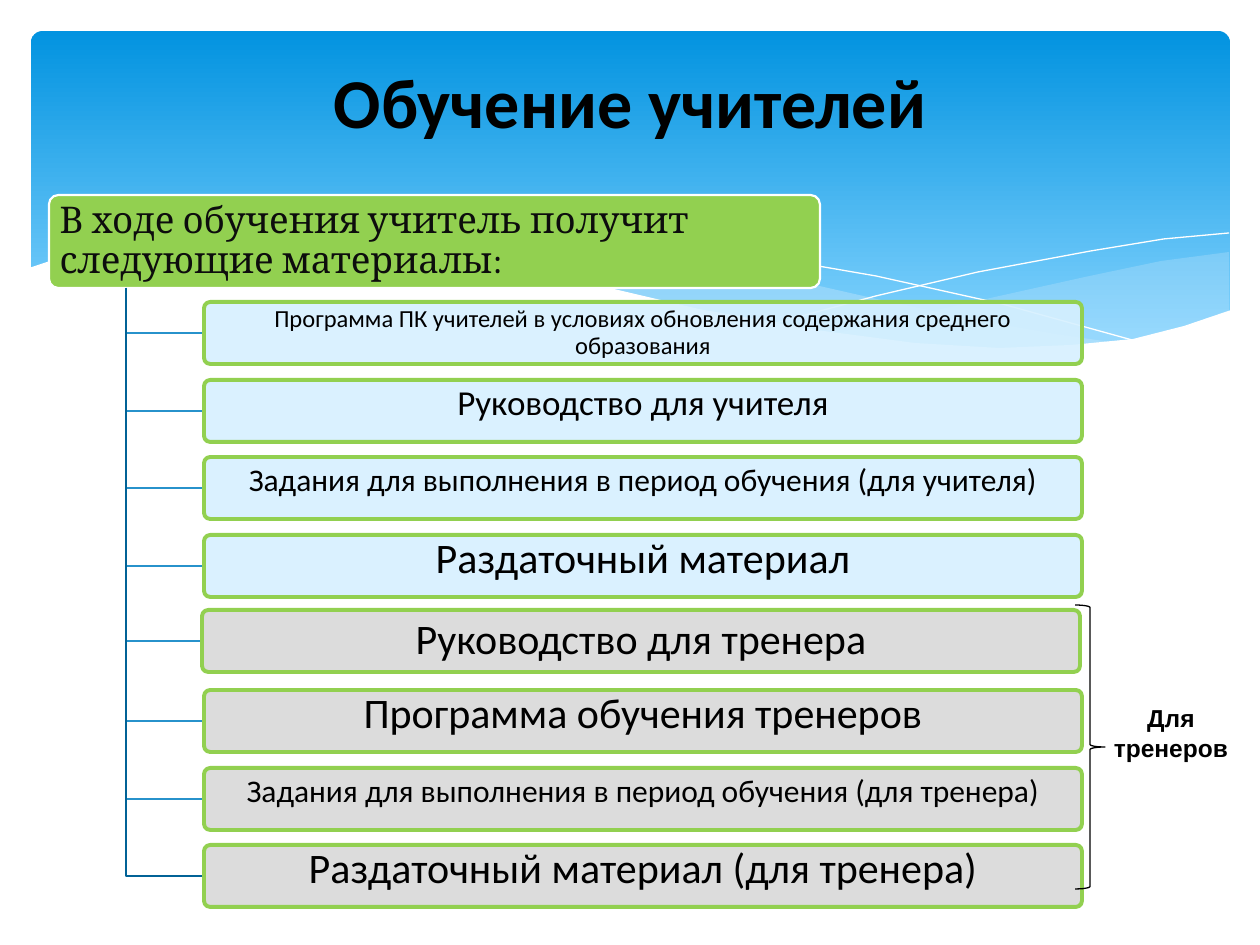
from lxml.etree import SubElement
from pptx import Presentation
from pptx.dml.color import RGBColor
from pptx.enum.shapes import MSO_SHAPE
from pptx.enum.text import MSO_ANCHOR, PP_ALIGN
from pptx.oxml.ns import qn
from pptx.util import Emu, Pt

PX = 914400 / 126
COLORS = {
    "sky": "0293E0", "pale": "83D3FE", "mist": "C6E7FC", "white": "FFFFFF",
    "green": "92D050", "ice": "D6F0FF", "gray": "D9D9D9", "black": "000000",
    "ink": "0D0D0D", "link": "2792CB", "deep": "016296",
}
WAVES = [
    ([(1229, 252), (1161, 261), (1085, 277), (959, 305), (833, 334), (888, 342),
      (969, 349), (1052, 349), (1120, 342), (1178, 330), (1229, 311)], "mist", 29),
    ([(1125, 344), (1055, 334), (976, 320), (890, 302), (793, 280), (736, 265),
      (665, 252), (586, 241), (501, 234), (433, 233), (360, 241), (431, 251),
      (509, 266), (566, 280), (668, 302), (757, 321), (838, 335), (910, 344),
      (974, 349), (1043, 350), (1104, 346)], "mist", 40),
]
CURVES = [
    [(389, 246), (433, 239), (505, 236), (591, 238), (671, 245), (766, 257),
     (876, 276), (1002, 304), (1143, 343)],
    [(772, 324), (876, 296), (978, 272), (1091, 251), (1164, 239), (1229, 233)],
]
SHORE = [(1231, 310), (1184, 326), (1133, 339), (1071, 345), (999, 348),
         (915, 343), (816, 330), (699, 309), (563, 277), (460, 255), (368, 239),
         (290, 233), (223, 232), (166, 236), (120, 243), (84, 251), (50, 261),
         (29, 268), (29, 415), (1231, 415)]
ROWS = [
    ("Программа ПК учителей в условиях обновления содержания среднего образования", 14, 0),
    ("Руководство для учителя", 20, 18),
    ("Задания для выполнения в период обучения (для учителя)", 18, 18),
    ("Раздаточный материал", 24, 18),
    ("Руководство для тренера", 24, 0),
    ("Программа обучения тренеров", 24, 18),
    ("Задания для выполнения в период обучения (для тренера)", 18, 18),
    ("Раздаточный материал (для тренера)", 24, 18),
]


def px(num):
    """Turn pixels into EMU."""
    return Emu(round(num * PX))


def tint(color, name):
    """Give a colour format one of the named colours."""
    color.rgb = RGBColor.from_string(COLORS[name])


def paint(shape, fill=None, line=None, width=1, alpha=100):
    """Set fill, opacity and outline, and drop the shadow."""
    shape.shadow.inherit = False
    if fill:
        shape.fill.solid()
        tint(shape.fill.fore_color, fill)
        if alpha < 100:
            rgb = shape.element.spPr.find(".//" + qn("a:srgbClr"))
            SubElement(rgb, qn("a:alpha"), val=str(alpha * 1000))
    else:
        shape.fill.background()
    if line:
        tint(shape.line.color, line)
        shape.line.width = Pt(width)
    else:
        shape.line.fill.background()


def write(shape, text, font, color="black", align=PP_ALIGN.CENTER, gap=1.0,
          **frame):
    """Put one paragraph of styled text in a shape."""
    body = shape.text_frame
    body.word_wrap = True
    for key, val in frame.items():
        setattr(body, key, val)
    para = body.paragraphs[0]
    para.alignment = align
    para.line_spacing = gap
    run = para.add_run()
    run.text = text
    for key, val in font.items():
        setattr(run.font, key, val)
    tint(run.font.color, color)


def add_box(slide, box, kind=MSO_SHAPE.ROUNDED_RECTANGLE, curve=None, **look):
    """Add a preset shape at a pixel box."""
    shape = slide.shapes.add_shape(kind, *map(px, box))
    if curve is not None:
        shape.adjustments[0] = curve
    paint(shape, **look)
    return shape


def add_path(slide, points, close=False, **look):
    """Add a freeform through pixel points."""
    pen = slide.shapes.build_freeform(*points[0], scale=PX)
    pen.add_line_segments(points[1:], close=close)
    paint(pen.convert_to_shape(), **look)


def add_sky(slide):
    """Draw the blue header with its waves."""
    sky = add_box(slide, (31, 31, 1199, 340), curve=0.034, fill="sky")
    sky.fill.gradient()
    sky.fill.gradient_angle = 270
    for stop, name, pos in zip(sky.fill.gradient_stops, ("sky", "pale"), (0, 0.9)):
        tint(stop.color, name)
        stop.position = pos
    for points, fill, alpha in WAVES:
        add_path(slide, points, close=True, fill=fill, alpha=alpha)
    for points in CURVES:
        add_path(slide, points, line="white", width=0)
    add_path(slide, SHORE, close=True, fill="white")


def add_title(slide, text):
    """Place the title above the header."""
    title = slide.shapes.title
    title.element.getparent().append(title.element)
    place = dict(left=63, top=47, width=1134, height=108)
    for key, val in place.items():
        setattr(title, key, px(val))
    write(title, text, dict(name="Calibri", size=Pt(40), bold=True),
          vertical_anchor=MSO_ANCHOR.MIDDLE)


def add_root(slide, text):
    """Add the green box that heads the list."""
    root = add_box(slide, (49, 195, 771, 93), curve=0.1, fill="green",
                   line="white", width=1.25)
    write(root, text, dict(name="Cambria", size=Pt(21)), "ink", PP_ALIGN.LEFT, 0.9,
          vertical_anchor=MSO_ANCHOR.MIDDLE, margin_left=px(8),
          margin_right=px(8), margin_top=px(6), margin_bottom=px(6))


def add_row(slide, num, text, size, lift):
    """Add one list row and the elbow that leads to it."""
    nudge = 2 if num == 4 else 0
    left, top = 204 - nudge, round(302 + 77.6 * num) - nudge
    mid = top + 31
    add_path(slide, [(126, 288), (126, mid), (left, mid)],
             line="deep" if num == len(ROWS) - 1 else "link", width=1.25)
    row = add_box(slide, (left, top, 878, 62), curve=0.1, alpha=90,
                  fill="ice" if num < 4 else "gray", line="green", width=2.25)
    write(row, text, dict(name="Calibri", size=Pt(size)),
          gap=1.0 if lift else 0.9, vertical_anchor=MSO_ANCHOR.MIDDLE,
          margin_left=px(6), margin_right=px(6), margin_top=0,
          margin_bottom=px(lift))


def add_note(slide, text):
    """Bracket the trainer rows and label them."""
    add_box(slide, (1075, 605, 30, 284), MSO_SHAPE.RIGHT_BRACE, line="black",
            width=0.75)
    note = slide.shapes.add_textbox(*map(px, (1094, 697, 154, 72)))
    write(note, text, dict(name="Arial", size=Pt(14), bold=True))


def main():
    """Build the slide and save it."""
    deck = Presentation()
    deck.slide_width, deck.slide_height = px(1260), px(945)
    slide = deck.slides.add_slide(deck.slide_layouts[5])
    add_sky(slide)
    add_title(slide, "Обучение учителей")
    add_root(slide, "В ходе обучения учитель получит следующие материалы:")
    for num, row in enumerate(ROWS):
        add_row(slide, num, *row)
    add_note(slide, "Для тренеров")
    deck.save("out.pptx")


if __name__ == "__main__":
    main()
